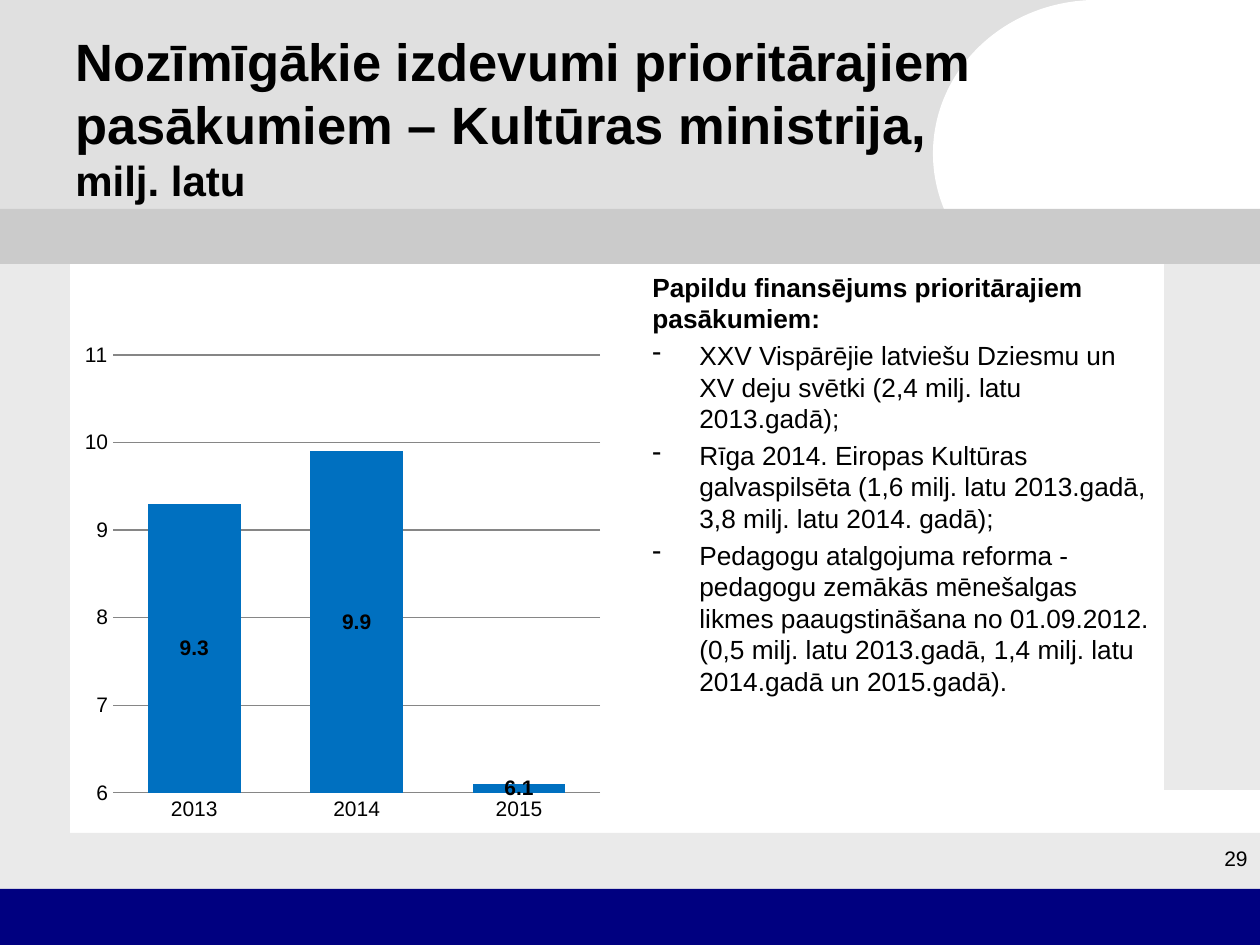
from pptx import Presentation
from pptx.chart.data import CategoryChartData
from pptx.dml.color import RGBColor
from pptx.enum.chart import XL_CHART_TYPE, XL_LABEL_POSITION, XL_TICK_MARK
from pptx.enum.shapes import MSO_SHAPE
from pptx.enum.text import MSO_ANCHOR, PP_ALIGN
from pptx.oxml.ns import qn
from pptx.util import Pt

RECT, ELLIPSE = MSO_SHAPE.RECTANGLE, MSO_SHAPE.OVAL
COLUMNS = XL_CHART_TYPE.COLUMN_CLUSTERED
CENTER, NO_TICK = XL_LABEL_POSITION.CENTER, XL_TICK_MARK.NONE
TOP, MIDDLE = MSO_ANCHOR.TOP, MSO_ANCHOR.MIDDLE
LEFT, RIGHT = PP_ALIGN.LEFT, PP_ALIGN.RIGHT

EMU_PER_PX = 914400 / 126
FONT = "Arial"
COLORS = {
    "header": "E0E0E0", "white": "FFFFFF", "frame": "EAEAEA", "footer": "000080",
    "band": "CBCBCB", "text": "000000", "bar": "0070C0", "grid": "868686",
}
DECOR = [
    (RECT, 0, 0, 1145, 213, "header"),
    (ELLIPSE, 933, 0, 327, 307, "white"),
    (RECT, 0, 264, 70, 625, "frame"),
    (RECT, 33, 833, 1227, 56, "frame"),
    (RECT, 0, 889, 1260, 56, "footer"),
    (RECT, 1164, 264, 96, 526, "frame"),
    (RECT, 1086, 0, 174, 255, "white"),
    (RECT, 0, 209, 1260, 55, "band"),
]
MEASURES = [
    "XXV Vispārējie latviešu Dziesmu un XV deju svētki (2,4 milj. latu 2013.gadā);",
    "Rīga 2014. Eiropas Kultūras galvaspilsēta (1,6 milj. latu 2013.gadā, 3,8 milj. latu 2014. gadā);",
    "Pedagogu atalgojuma reforma - pedagogu zemākās mēnešalgas likmes paaugstināšana no "
    "01.09.2012.(0,5 milj. latu 2013.gadā, 1,4 milj. latu 2014.gadā un 2015.gadā).",
]


def px(*lengths):
    return [round(length * EMU_PER_PX) for length in lengths]


def color(name):
    return RGBColor.from_string(COLORS[name])


class SlideBuilder:
    """Holds the deck style and adds elements to the current slide."""

    def __init__(self, deck):
        self.page = deck.slides.add_slide(deck.slide_layouts[6])

    def style(self, font, size, bold=False):
        font.name, font.size, font.bold = FONT, Pt(size), bold
        font.color.rgb = color("text")

    def shape(self, kind, left, top, width, height, fill):
        shape = self.page.shapes.add_shape(kind, *px(left, top, width, height))
        shape.shadow.inherit = False
        shape.fill.solid()
        shape.fill.fore_color.rgb = color(fill)
        shape.line.fill.background()

    def text_box(self, left, top, width, height, anchor=TOP):
        box = self.page.shapes.add_textbox(*px(left, top, width, height))
        box.text_frame.word_wrap = True
        box.text_frame.vertical_anchor = anchor
        return box.text_frame

    def span(self, para, text, size, bold=False):
        span = para.add_run()
        span.text = text
        self.style(span.font, size, bold)

    def bullet(self, frame, text, size):
        para = frame.add_paragraph()
        para.space_before = Pt(3)
        indent = px(47)[0]
        properties = para._p.get_or_add_pPr()
        properties.set("marL", str(indent))
        properties.set("indent", str(-indent))
        mark = properties.makeelement(qn("a:buChar"), {"char": "-"})
        properties.append(mark)
        self.span(para, text, size)

    def column_chart(self, left, top, width, height, categories, values):
        data = CategoryChartData()
        data.categories = categories
        data.add_series("Series 1", values)
        frame = self.page.shapes.add_chart(COLUMNS, *px(left, top, width, height), data)
        chart = frame.chart
        chart.has_legend = chart.has_title = False
        self.style(chart.font, 12)

        plot = chart.plots[0]
        plot.vary_by_categories = False
        plot.gap_width, plot.overlap = 75, -25
        series = plot.series[0]
        series.format.fill.solid()
        series.format.fill.fore_color.rgb = color("bar")
        labels = series.data_labels
        labels.show_value = True
        labels.position = CENTER
        labels.number_format, labels.number_format_is_linked = "0.0", False
        self.style(labels.font, 12, True)

        scale = chart.value_axis
        scale.minimum_scale, scale.maximum_scale, scale.major_unit = 6, 11, 1
        scale.tick_labels.number_format = "0"
        scale.tick_labels.number_format_is_linked = False
        scale.format.line.fill.background()
        scale.has_major_gridlines = True
        for axis in (scale, chart.category_axis):
            axis.major_tick_mark = axis.minor_tick_mark = NO_TICK
            self.style(axis.tick_labels.font, 12)
        for line in (scale.major_gridlines.format.line, chart.category_axis.format.line):
            line.color.rgb = color("grid")
            line.width = Pt(0.75)


def main():
    deck = Presentation()
    deck.slide_width, deck.slide_height = px(1260, 945)
    slide = SlideBuilder(deck)
    for decor in DECOR:
        slide.shape(*decor)

    title = slide.text_box(63, 38, 1134, 158, MIDDLE).paragraphs[0]
    slide.span(title, "Nozīmīgākie izdevumi prioritārajiem pasākumiem – Kultūras ministrija,", 30, True)
    title.add_line_break()
    slide.span(title, "milj. latu", 24, True)

    slide.column_chart(74, 334, 537, 496, ["2013", "2014", "2015"], [9.3, 9.9, 6.1])

    number = slide.text_box(975, 839, 285, 63).paragraphs[0]
    number.alignment = RIGHT
    slide.span(number, "29", 12)

    body = slide.text_box(640, 265, 525, 576)
    heading = body.paragraphs[0]
    heading.alignment = LEFT
    slide.span(heading, "Papildu finansējums prioritārajiem pasākumiem:", 15, True)
    for measure in MEASURES:
        slide.bullet(body, measure, 15)

    deck.save("out.pptx")


if __name__ == "__main__":
    main()
